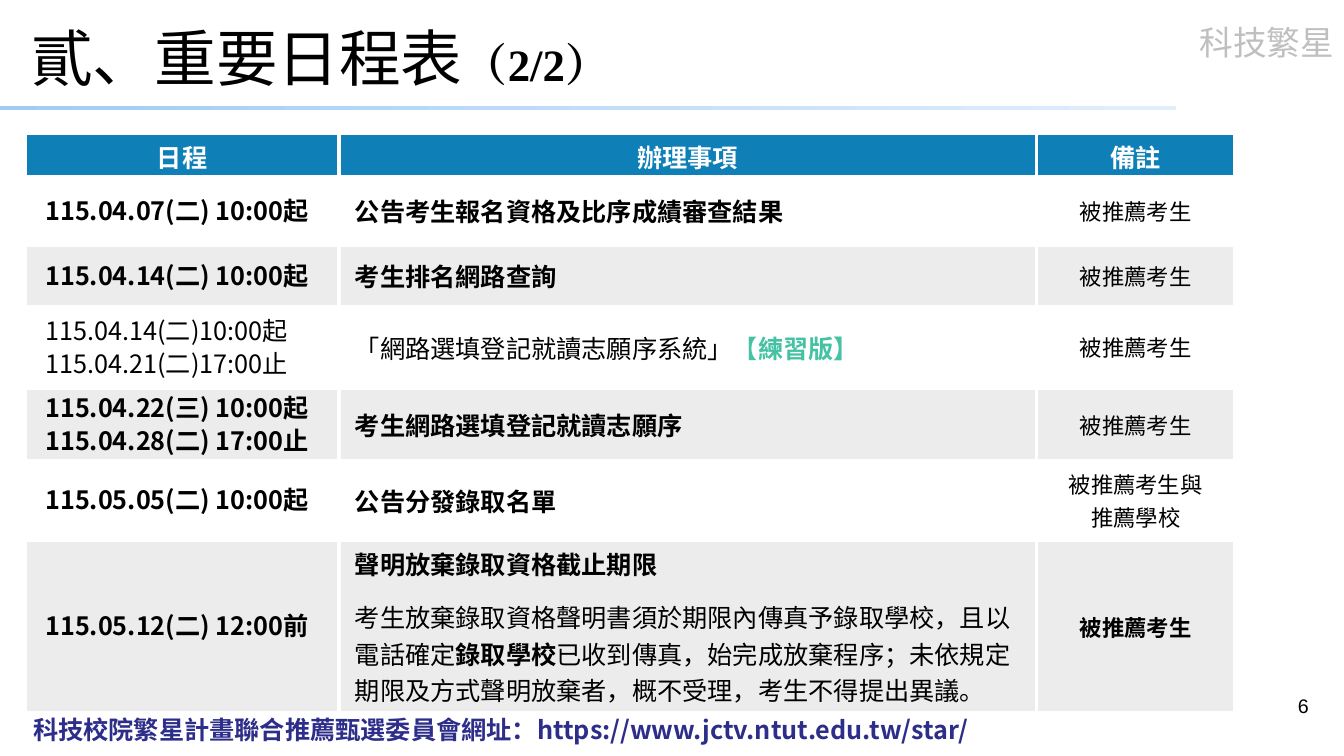
import dataclasses

import lxml.etree
import pptx
import pptx.dml.color
import pptx.enum.shapes
import pptx.enum.text
import pptx.oxml.ns
import pptx.util

Inches = pptx.util.Inches
Pt = pptx.util.Pt
Align = pptx.enum.text.PP_ALIGN
Anchor = pptx.enum.text.MSO_ANCHOR
qn = pptx.oxml.ns.qn


@dataclasses.dataclass(frozen=True)
class Theme:
    heading_font: str = "Noto Sans CJK JP"
    body_font: str = "Noto Sans CJK SC"
    serif_font: str = "Times New Roman"
    number_font: str = "Arial"
    black: str = "000000"
    white: str = "FFFFFF"
    header: str = "0E7FB7"
    band: str = "ECECEC"
    practice: str = "45C1A4"
    link: str = "2D2D8A"
    faint: str = "BFBFBF"
    rule_start: str = "9FCCF6"
    rule_end: str = "E2EEFB"
    title_size: int = 44
    part_size: int = 32
    label_size: int = 24
    body_size: int = 18
    note_size: int = 16
    number_size: int = 14
    border: int = 3


THEME = Theme()


def rgb(value):
    return pptx.dml.color.RGBColor.from_string(value)


def add_span(para, text, size=THEME.body_size, color=THEME.black, bold=False,
             font=THEME.body_font):
    span = para.add_run()
    span.text = text
    span.font.size = Pt(size)
    span.font.bold = bold
    span.font.color.rgb = rgb(color)
    span.font.name = font
    east_asian = lxml.etree.SubElement(span.font._element, qn("a:ea"))
    east_asian.set("typeface", font)


def add_label(page, box, text, align=Align.LEFT, **style):
    frame = page.shapes.add_textbox(*map(Inches, box)).text_frame
    frame.word_wrap = True
    para = frame.paragraphs[0]
    para.alignment = align
    add_span(para, text, **style)


# Header: title, programme label and gradient rule
def add_header(page, box):
    left, top, width, height = box
    rule = page.shapes.add_shape(
        pptx.enum.shapes.MSO_SHAPE.RECTANGLE,
        Inches(left), Inches(top + 1.05), Inches(11.66), Inches(0.04))
    rule.shadow.inherit = False
    rule.line.fill.background()
    rule.fill.gradient()
    rule.fill.gradient_angle = 0
    for stop, color in zip(rule.fill.gradient_stops, (THEME.rule_start, THEME.rule_end)):
        stop.color.rgb = rgb(color)

    add_label(page, (left + width - 2.36, top + 0.17, 2.36, 0.5), "科技繁星", Align.RIGHT,
              size=THEME.label_size, color=THEME.faint, font=THEME.heading_font)

    title = page.shapes.title
    title.left, title.top = Inches(left + 0.21), Inches(top + 0.22)
    title.width, title.height = Inches(11.29), Inches(0.69)
    frame = title.text_frame
    frame.auto_size = pptx.enum.text.MSO_AUTO_SIZE.NONE
    frame.vertical_anchor = Anchor.MIDDLE
    para = frame.paragraphs[0]
    para.alignment = Align.LEFT
    add_span(para, "貳、重要日程表", THEME.title_size, font=THEME.heading_font)
    add_span(para, "（2/2）", THEME.part_size, bold=True, font=THEME.serif_font)


# Schedule rows: height, dates, dates in bold, task paragraphs, notes, notes in bold.
# Each task paragraph lists spans of (text, bold, colour).
def task(text):
    return [(text, True, THEME.black)]


SCHEDULE = [
    (0.68, ["115.04.07(二) 10:00起"], True,
     [task("公告考生報名資格及比序成績審查結果")], ["被推薦考生"], False),
    (0.61, ["115.04.14(二) 10:00起"], True,
     [task("考生排名網路查詢")], ["被推薦考生"], False),
    (0.81, ["115.04.14(二)10:00起", "115.04.21(二)17:00止"], False,
     [[("「網路選填登記就讀志願序系統」", False, THEME.black),
       ("【", False, THEME.practice), ("練習版】", True, THEME.practice)]],
     ["被推薦考生"], False),
    (0.72, ["115.04.22(三) 10:00起", "115.04.28(二) 17:00止"], True,
     [task("考生網路選填登記就讀志願序")], ["被推薦考生"], False),
    (0.79, ["115.05.05(二) 10:00起"], True,
     [task("公告分發錄取名單")], ["被推薦考生與", "推薦學校"], False),
    (1.71, ["115.05.12(二) 12:00前"], True,
     [task("聲明放棄錄取資格截止期限"),
      [("考生放棄錄取資格聲明書須於期限內傳真予錄取學校，且以電話確定", False, THEME.black),
       ("錄取學校", True, THEME.black),
       ("已收到傳真，始完成放棄程序；未依規定期限及方式聲明放棄者，概不受理，考生不得提出異議。",
        False, THEME.black)]],
     ["被推薦考生"], True),
]
HEADINGS = ["日程", "辦理事項", "備註"]
COLUMNS = [3.11, 6.92, 1.97]
HEADING_HEIGHT = 0.43


def format_cell(cell, fill, left=0.1, right=0.1, vertical=0.05):
    properties = cell._tc.get_or_add_tcPr()
    for side in ("a:lnL", "a:lnR", "a:lnT", "a:lnB"):
        line = lxml.etree.SubElement(properties, qn(side), w=str(Pt(THEME.border)))
        solid = lxml.etree.SubElement(line, qn("a:solidFill"))
        lxml.etree.SubElement(solid, qn("a:srgbClr"), val=THEME.white)
    cell.fill.solid()
    cell.fill.fore_color.rgb = rgb(fill)
    cell.vertical_anchor = Anchor.MIDDLE
    cell.margin_left, cell.margin_right = Inches(left), Inches(right)
    cell.margin_top = cell.margin_bottom = Inches(vertical)


def write_cell(cell, paragraphs, align=Align.LEFT, size=THEME.body_size):
    frame = cell.text_frame
    for index, spans in enumerate(paragraphs):
        para = frame.add_paragraph() if index else frame.paragraphs[0]
        para.alignment = align
        for text, bold, color in spans:
            add_span(para, text, size, color, bold)
    return frame.paragraphs


def add_schedule(page, box):
    table = page.shapes.add_table(
        len(SCHEDULE) + 1, len(COLUMNS), *map(Inches, box)).table
    table.first_row = table.horz_banding = False
    for column, width in zip(table.columns, COLUMNS):
        column.width = Inches(width)
    heights = [HEADING_HEIGHT] + [entry[0] for entry in SCHEDULE]
    for row, height in zip(table.rows, heights):
        row.height = Inches(height)

    for index, heading in enumerate(HEADINGS):
        cell = table.cell(0, index)
        format_cell(cell, THEME.header)
        write_cell(cell, [[(heading, True, THEME.white)]], Align.CENTER)

    for number, entry in enumerate(SCHEDULE, 1):
        _, dates, dates_bold, tasks, notes, notes_bold = entry
        fill = THEME.white if number % 2 else THEME.band
        date_cell, task_cell, note_cell = table.rows[number].cells

        format_cell(date_cell, fill, 0.2, 0.02, 0)
        for para in write_cell(date_cell, [[(date, dates_bold, THEME.black)] for date in dates]):
            para.line_spacing = Pt(24)

        format_cell(task_cell, fill, 0.16, 0.08, 0)
        for para in write_cell(task_cell, tasks)[:-1]:
            para.space_after = Pt(12)

        format_cell(note_cell, fill)
        write_cell(note_cell, [[(note, notes_bold, THEME.black)] for note in notes],
                   Align.CENTER, THEME.note_size)


# Footer: committee address and page number
def add_footer(page, box):
    left, top, width, _ = box
    add_label(page, (left + 0.23, top + 0.21, 12, 0.4),
              "科技校院繁星計畫聯合推薦甄選委員會網址：https://www.jctv.ntut.edu.tw/star/",
              color=THEME.link, bold=True)
    add_label(page, (left + width - 3.36, top, 3.11, 0.52), "6", Align.RIGHT,
              size=THEME.number_size, font=THEME.number_font)


def main():
    deck = pptx.Presentation()
    deck.slide_width, deck.slide_height = Inches(13.33), Inches(7.5)
    page = deck.slides.add_slide(deck.slide_layouts.get_by_name("Title Only"))
    add_header(page, (0, 0, 13.33, 1.1))
    add_schedule(page, (0.25, 1.32, sum(COLUMNS), 5.75))
    add_footer(page, (0, 6.83, 13.33, 0.67))
    deck.save("out.pptx")


if __name__ == "__main__":
    main()
